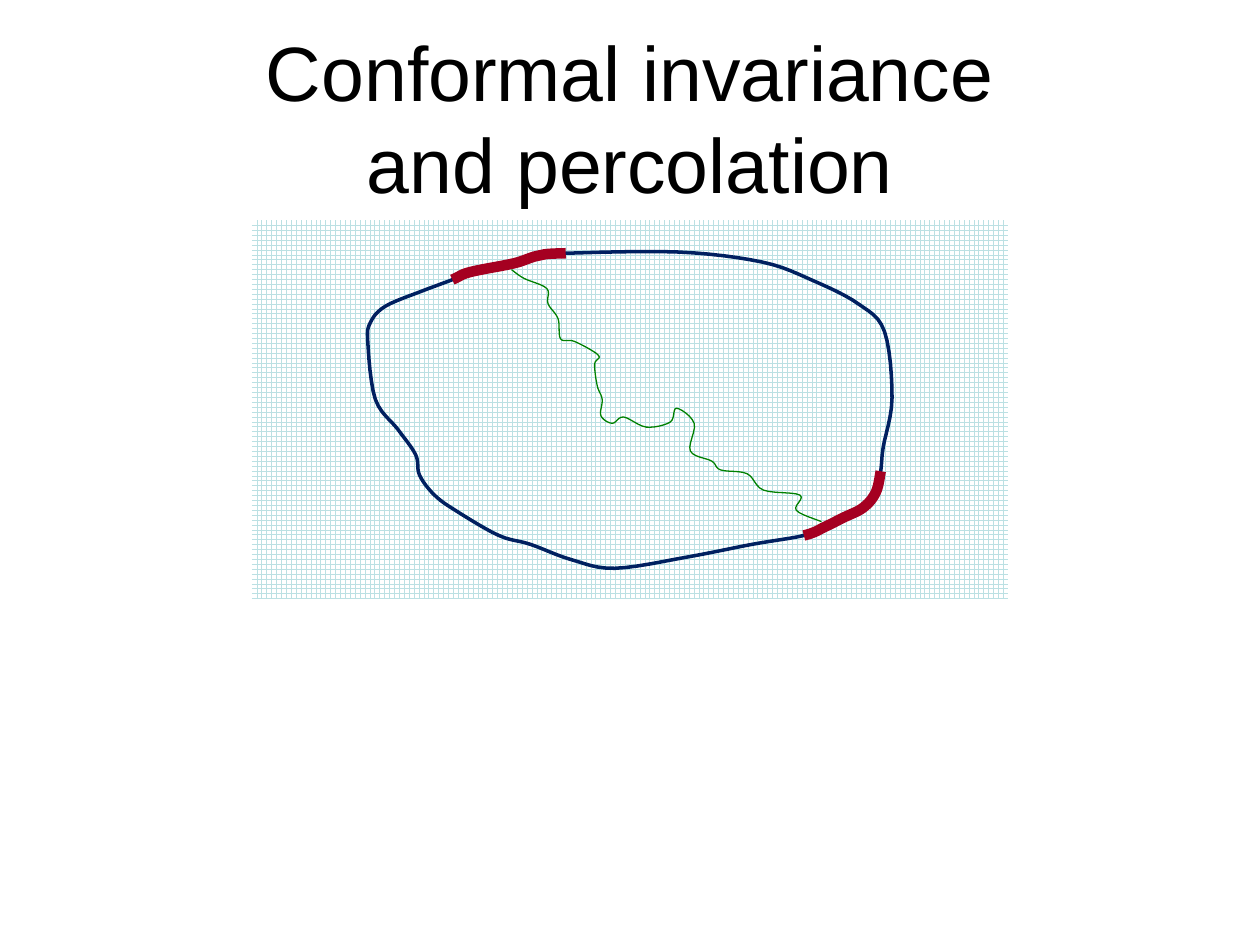
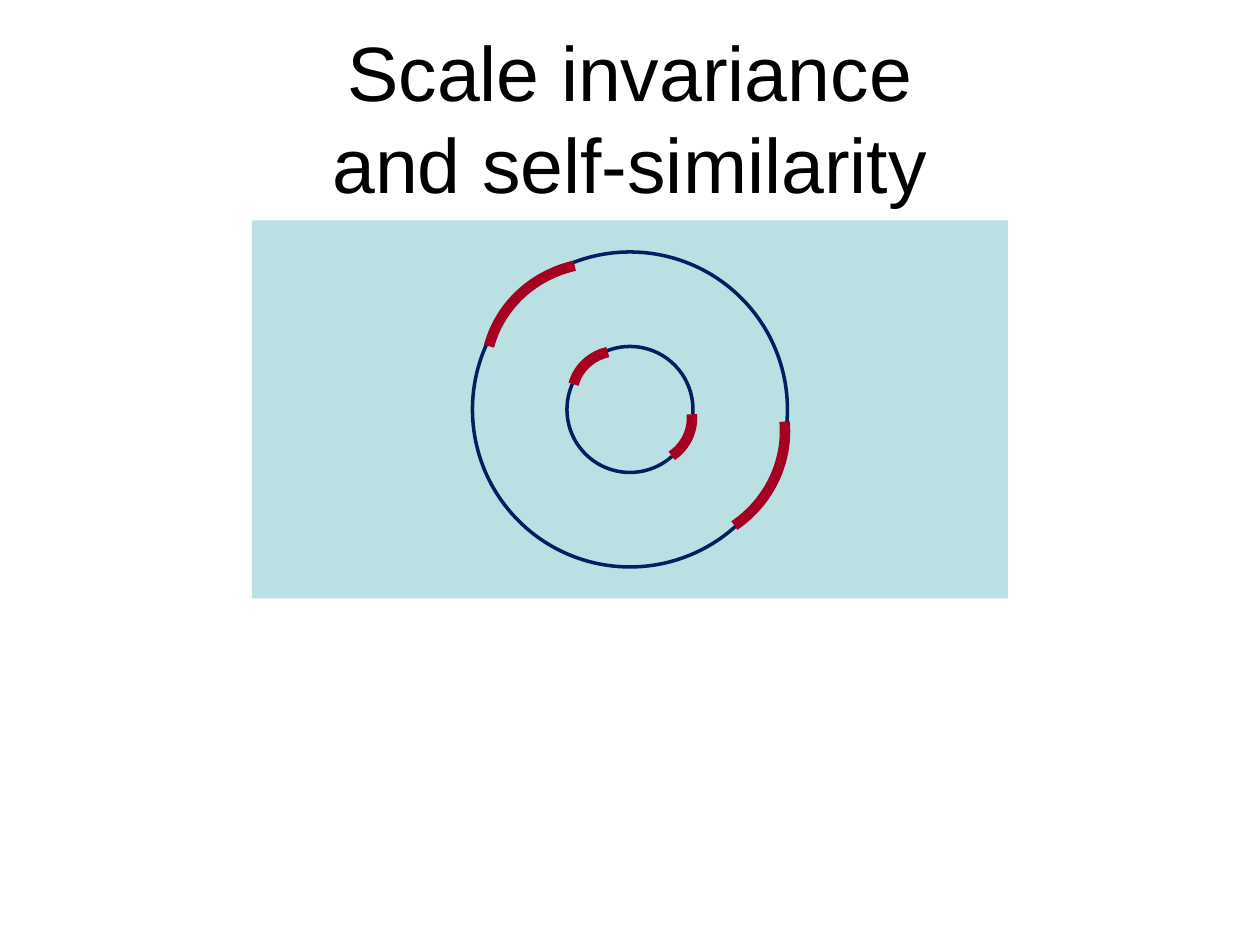
import pptx
import pptx.util
import pptx.dml.color
import pptx.enum.dml
import pptx.enum.shapes
import pptx.enum.text
from dataclasses import dataclass

Inches = pptx.util.Inches
Shape = pptx.enum.shapes.MSO_SHAPE


@dataclass(frozen=True)
class Theme:
    font: str = "Arial"
    title_size: int = 44
    text: str = "000000"
    paper: str = "FFFFFF"
    panel: str = "BBE0E3"
    boundary: str = "002060"
    gate: str = "A50021"
    crossing: str = "008000"
    boundary_width: float = 2
    gate_width: float = 6
    crossing_width: float = 0.75


THEME = Theme()

# Shared by both pages: left, top, width, height in inches
TITLE_PLACE = (0.5, 0.3, 9, 1.25)
PANEL_PLACE = (2, 1.75, 6, 3)
PERCOLATION_TITLE = ["Conformal invariance", "and percolation"]
SCALE_TITLE = ["Scale invariance", "and self-similarity"]

# Percolation: the boundary runs clockwise through four stretches.
# Only its turning points are given; smooth_curve fills in the rest.
BOUNDARY = {
    "upper gate": [(3.59, 2.22), (3.73, 2.16), (4.08, 2.09), (4.27, 2.03),
                   (4.49, 2.01)],
    "right side": [(5.38, 2), (6.05, 2.08), (6.46, 2.23), (6.81, 2.41),
                   (7.02, 2.63), (7.08, 3.16), (7.01, 3.55)],
    "lower gate": [(6.99, 3.74), (6.95, 3.91), (6.85, 4.03), (6.69, 4.11),
                   (6.55, 4.18), (6.38, 4.25)],
    "left side": [(5.97, 4.32), (5.46, 4.42), (4.88, 4.51), (4.53, 4.44),
                  (4.21, 4.32), (3.96, 4.25), (3.63, 4.06), (3.45, 3.93),
                  (3.33, 3.77), (3.3, 3.61), (3.16, 3.41), (2.98, 3.17),
                  (2.92, 2.72), (2.94, 2.56), (3.06, 2.43), (3.35, 2.31)],
}
GATES = ["upper gate", "lower gate"]
CROSSING = [
    (4.06, 2.14), (4.16, 2.21), (4.34, 2.29), (4.35, 2.41), (4.43, 2.53),
    (4.45, 2.69), (4.56, 2.71), (4.75, 2.82), (4.72, 2.89), (4.74, 3.06),
    (4.78, 3.17), (4.77, 3.3), (4.86, 3.36), (4.95, 3.31), (5.13, 3.39),
    (5.32, 3.35), (5.37, 3.24), (5.51, 3.36), (5.48, 3.58), (5.65, 3.66),
    (5.72, 3.73), (5.93, 3.76), (6.06, 3.89), (6.35, 3.93), (6.32, 4.05),
    (6.52, 4.14),
]
STEPS_PER_SPAN = 6

# Scale invariance: one figure, drawn at each scale about the same centre
CENTRE = (5, 3.25)
SCALES = [1, 0.4]
CIRCLE_SIZE = (2.5, 2.5)
ARC_SWEEP = (159.34, 194.34)
ARCS = [
    {"offset": (-0.18, -0.24), "size": (1.84, 1.95), "rotation": 290.1},
    {"offset": (0.28, 0.17), "size": (1.84, 1.9), "rotation": 90},
]


# Formatting
def rgb(colour):
    return pptx.dml.color.RGBColor.from_string(colour)


def write_text(frame, lines, *, size, colour, align, anchor):
    frame.word_wrap = True
    frame.auto_size = pptx.enum.text.MSO_AUTO_SIZE.NONE
    frame.vertical_anchor = anchor
    para = frame.paragraphs[0]
    para.alignment = align
    for index, line in enumerate(lines):
        if index:
            para.add_line_break()
        span = para.add_run()
        span.text = line
        span.font.name = THEME.font
        span.font.size = pptx.util.Pt(size)
        span.font.color.rgb = rgb(colour)


def style(shape, *, fill=None, line=None, width=1):
    shape.shadow.inherit = False
    if fill:
        shape.fill.solid()
        shape.fill.fore_color.rgb = rgb(fill)
    else:
        shape.fill.background()
    if line:
        shape.line.color.rgb = rgb(line)
        shape.line.width = pptx.util.Pt(width)
    else:
        shape.line.fill.background()


def add_page(deck, title_lines):
    """Add a page with its title and the panel that holds the figure."""
    page = deck.slides.add_slide(deck.slide_layouts[5])
    title = page.shapes.title
    title.left, title.top, title.width, title.height = map(Inches, TITLE_PLACE)
    write_text(title.text_frame, title_lines, size=THEME.title_size,
               colour=THEME.text, align=pptx.enum.text.PP_ALIGN.CENTER,
               anchor=pptx.enum.text.MSO_ANCHOR.MIDDLE)
    panel = page.shapes.add_shape(Shape.RECTANGLE, *map(Inches, PANEL_PLACE))
    style(panel, fill=THEME.panel)
    return page, panel


# Curves
def spline(before, start, end, after, t):
    """Catmull-Rom value between start and end, for t from 0 to 1."""
    return start + t / 2 * (
        end - before
        + t * (2 * before - 5 * start + 4 * end - after)
        + t * t * (3 * (start - end) + after - before))


def smooth_curve(points, closed=False):
    """Pass a smooth curve through the points, STEPS_PER_SPAN to a span."""
    if closed:
        padded = [points[-1], *points, *points[:2]]
    else:
        padded = [points[0], *points, points[-1]]
    curve = []
    for corners in zip(padded, padded[1:], padded[2:], padded[3:]):
        for step in range(STEPS_PER_SPAN):
            t = step / STEPS_PER_SPAN
            curve.append(tuple(spline(*axis, t) for axis in zip(*corners)))
    return curve if closed else curve + [points[-1]]


def add_curve(page, curve, *, colour, width, closed=False):
    vertices = [(Inches(x), Inches(y)) for x, y in curve]
    builder = page.shapes.build_freeform(*vertices[0])
    builder.add_line_segments(vertices[1:], close=closed)
    style(builder.convert_to_shape(), line=colour, width=width)


def add_domain(page):
    """Draw the closed boundary, then its gates as thick slices of it."""
    turning_points = sum(BOUNDARY.values(), [])
    outline = smooth_curve(turning_points, closed=True)
    add_curve(page, outline, closed=True,
              colour=THEME.boundary, width=THEME.boundary_width)
    for gate in GATES:
        first = turning_points.index(BOUNDARY[gate][0])
        last = first + len(BOUNDARY[gate]) - 1
        piece = outline[first * STEPS_PER_SPAN:last * STEPS_PER_SPAN + 1]
        add_curve(page, piece, colour=THEME.gate, width=THEME.gate_width)


# Circles
def add_centred(group, kind, *, offset, size, scale):
    width, height = (side * scale for side in size)
    left = CENTRE[0] + offset[0] * scale - width / 2
    top = CENTRE[1] + offset[1] * scale - height / 2
    return group.shapes.add_shape(kind, *map(Inches, (left, top, width, height)))


def add_circle_with_gates(page, scale):
    group = page.shapes.add_group_shape()
    circle = add_centred(group, Shape.OVAL, offset=(0, 0),
                         size=CIRCLE_SIZE, scale=scale)
    style(circle, line=THEME.boundary, width=THEME.boundary_width)
    for gate in ARCS:
        arc = add_centred(group, Shape.ARC, offset=gate["offset"],
                          size=gate["size"], scale=scale)
        arc.rotation = gate["rotation"]
        arc.adjustments[0], arc.adjustments[1] = ARC_SWEEP
        style(arc, fill=THEME.panel, line=THEME.gate, width=THEME.gate_width)


# Pages
def build_percolation(deck):
    page, panel = add_page(deck, PERCOLATION_TITLE)
    panel.fill.patterned()
    panel.fill.pattern = pptx.enum.dml.MSO_PATTERN.LARGE_GRID
    panel.fill.fore_color.rgb = rgb(THEME.panel)
    panel.fill.back_color.rgb = rgb(THEME.paper)
    add_domain(page)
    add_curve(page, smooth_curve(CROSSING),
              colour=THEME.crossing, width=THEME.crossing_width)


def build_scale_invariance(deck):
    page, _ = add_page(deck, SCALE_TITLE)
    for scale in SCALES:
        add_circle_with_gates(page, scale)


def main():
    deck = pptx.Presentation()
    deck.slide_width, deck.slide_height = Inches(10), Inches(7.5)
    build_percolation(deck)
    build_scale_invariance(deck)
    deck.save("out.pptx")


if __name__ == "__main__":
    main()
